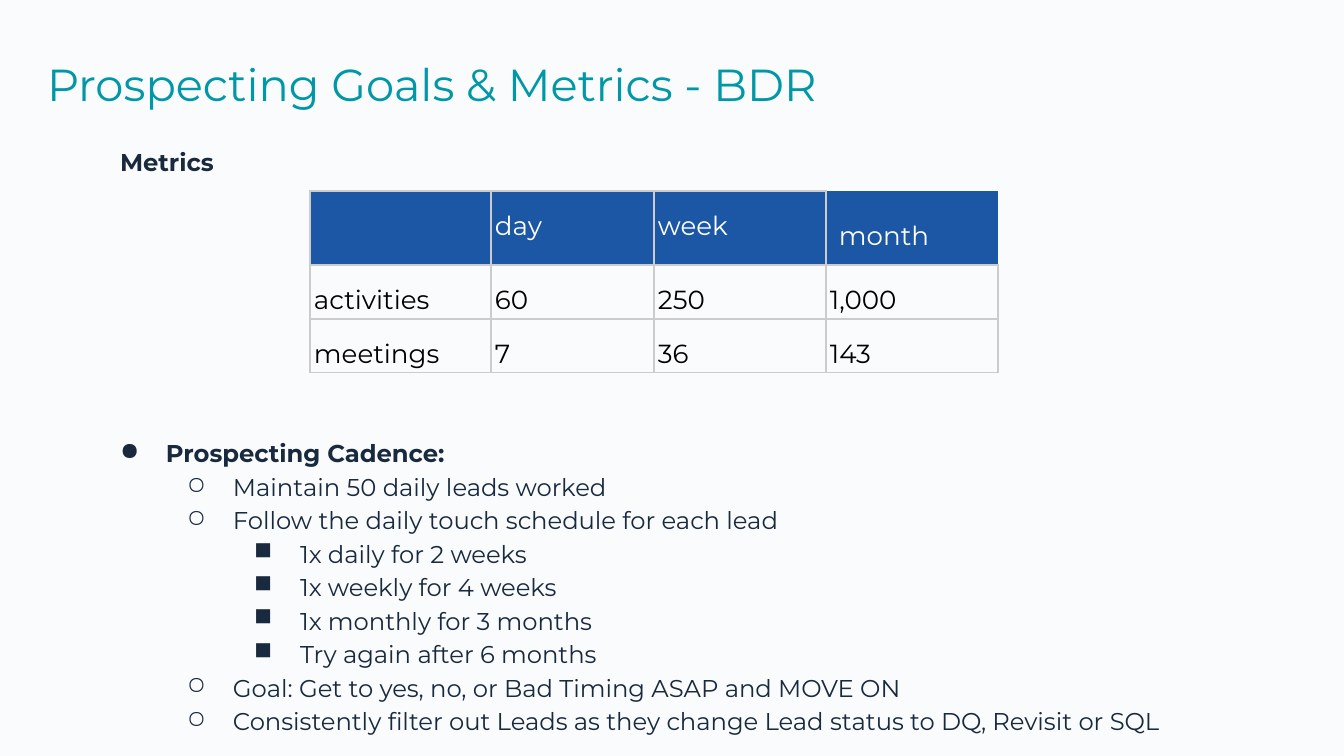
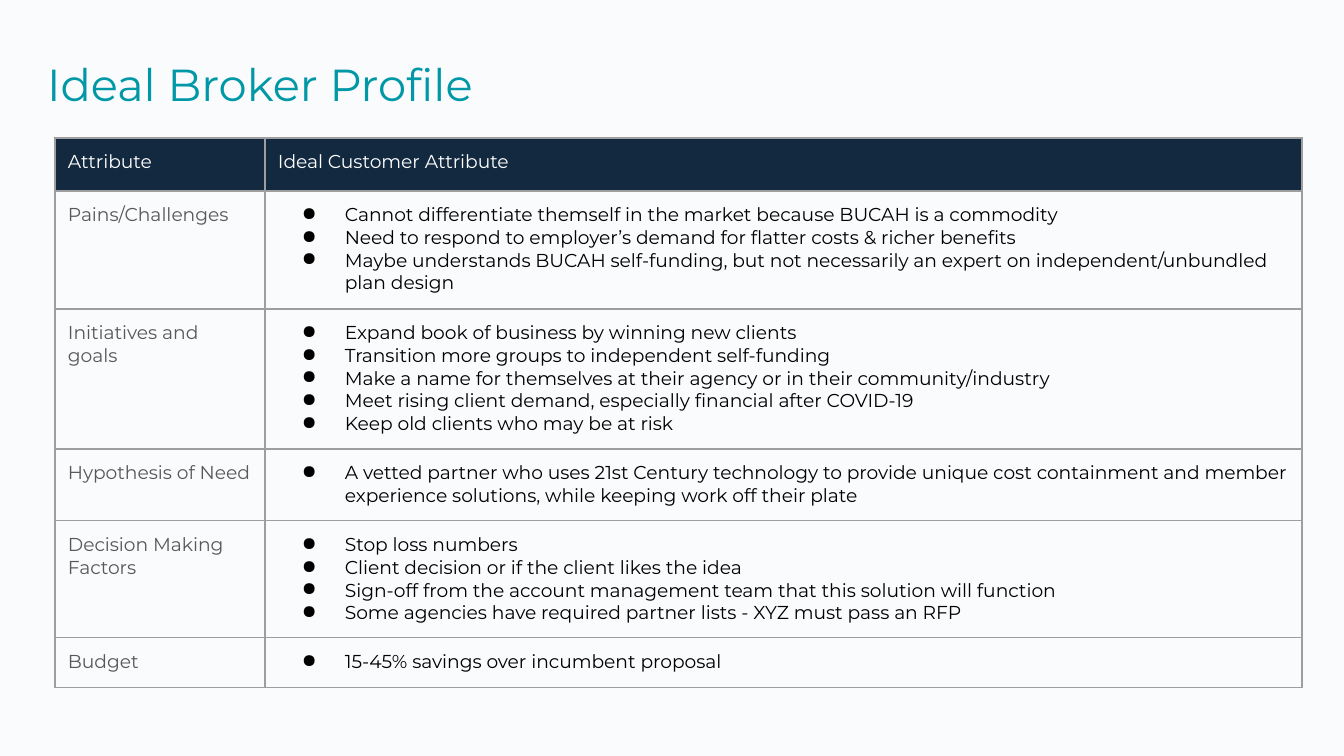
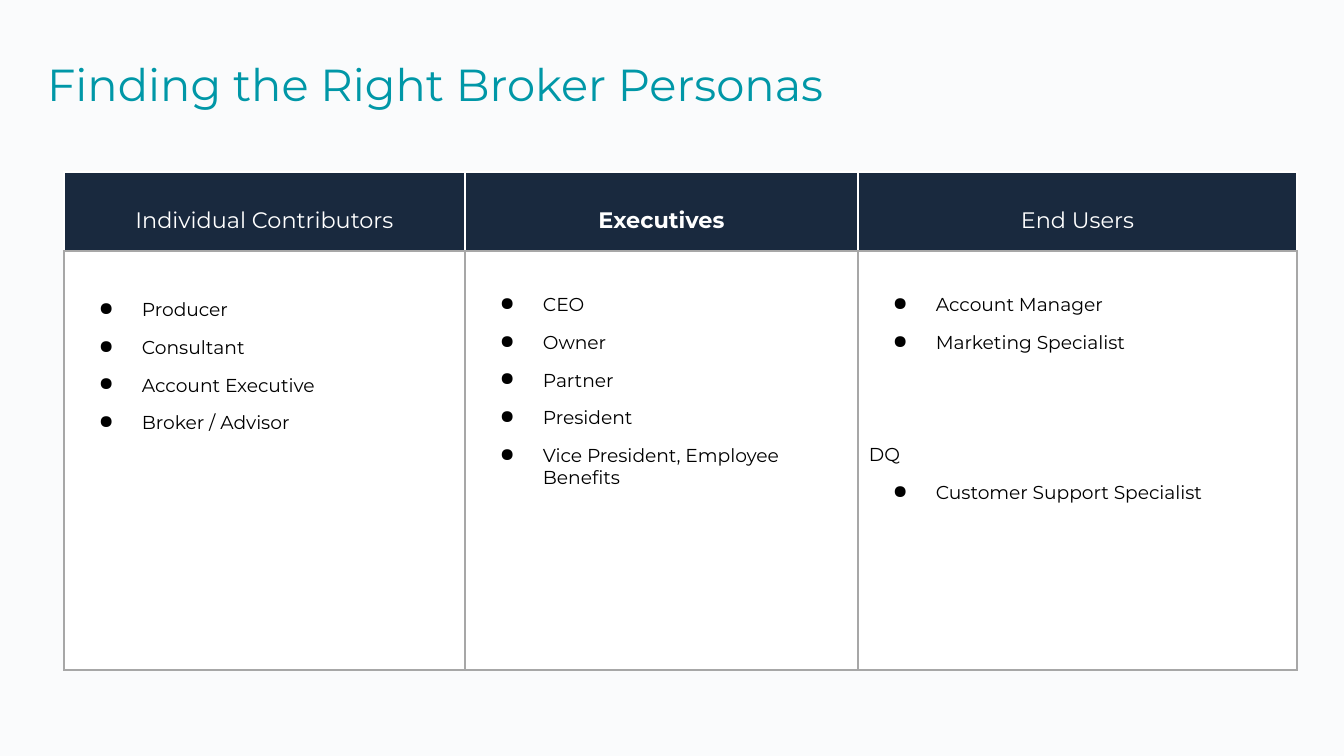
from lxml.etree import SubElement
from pptx import Presentation
from pptx.dml.color import RGBColor
from pptx.enum.text import MSO_ANCHOR, MSO_AUTO_SIZE, PP_ALIGN
from pptx.oxml import parse_xml
from pptx.oxml.ns import nsdecls, qn
from pptx.util import Pt

# Content
METRICS_TITLE = "Prospecting Goals & Metrics - BDR"
METRICS = [
    ["", "day", "week", "month"],
    ["activities", "60", "250", "1,000"],
    ["meetings", "7", "36", "143"],
]
CADENCE = [  # level, text
    (0, "Prospecting Cadence:"),
    (1, "Maintain 50 daily leads worked"),
    (1, "Follow the daily touch schedule for each lead"),
    (2, "1x daily for 2 weeks"),
    (2, "1x weekly for 4 weeks"),
    (2, "1x monthly for 3 months"),
    (2, "Try again after 6 months"),
    (1, "Goal: Get to yes, no, or Bad Timing ASAP and MOVE ON"),
    (1, "Consistently filter out Leads as they change Lead status to DQ, Revisit or SQL"),
]

PROFILE_TITLE = "Ideal Broker Profile"
PROFILE_HEAD = ["Attribute", "Ideal Customer Attribute"]
PROFILE = [
    ("Pains/Challenges", [
        "Cannot differentiate themself in the market because BUCAH is a commodity",
        "Need to respond to employer’s demand for flatter costs & richer benefits",
        "Maybe understands BUCAH self-funding, but not necessarily an expert on "
        "independent/unbundled plan design"]),
    ("Initiatives and goals", [
        "Expand book of business by winning new clients",
        "Transition more groups to independent self-funding",
        "Make a name for themselves at their agency or in their community/industry",
        "Meet rising client demand, especially financial after COVID-19",
        "Keep old clients who may be at risk"]),
    ("Hypothesis of Need", [
        "A vetted partner who uses 21st Century technology to provide unique cost "
        "containment and member experience solutions, while keeping work off their plate"]),
    ("Decision Making Factors", [
        "Stop loss numbers",
        "Client decision or if the client likes the idea",
        "Sign-off from the account management team that this solution will function",
        "Some agencies have required partner lists - XYZ must pass an RFP"]),
    ("Budget", ["15-45% savings over incumbent proposal"]),
]

PERSONAS_TITLE = "Finding the Right Broker Personas"
PERSONAS = [  # heading, bold heading, top inset, roles, disqualified roles
    ("Individual Contributors", False, 48,
     ["Producer", "Consultant", "Account Executive", "Broker / Advisor"], []),
    ("Executives", True, 43,
     ["CEO", "Owner", "Partner", "President", "Vice President, Employee Benefits"], []),
    ("End Users", False, 43,
     ["Account Manager", "Marketing Specialist"], ["Customer Support Specialist"]),
]

# Theme
THEME = {
    "font": "Montserrat",
    "bg": "FAFBFC", "title": "0097A7", "ink": "19293E", "blue": "1B57A5",
    "navy": "132940", "white": "FFFFFF", "black": "000000", "label": "585858",
    "metric_line": "CCCCCC", "profile_line": "9E9E9E", "persona_line": "A7A7A7",
    "title_size": 24, "metric_size": 14, "body_size": 13, "head_size": 12, "cell_size": 10,
}
BULLETS = "●○■"
INDENT = 67
PAD = (13, 13, 13, 13)
TIGHT = (4, 3, 4, 3)


def px(n):
    return round(n * 914400 / 134.4)


def rgb(name):
    return RGBColor.from_string(THEME[name])


# Text
def add_text(tf, text, size="cell_size", color="black", bold=False, align=PP_ALIGN.LEFT,
             spacing=None, before=None, level=None, hang=43):
    """Append one paragraph; a level makes it a bullet."""
    p = tf.paragraphs[0]
    if p.runs:
        p = tf.add_paragraph()
    p.alignment = align
    if spacing:
        p.line_spacing = spacing
    if before is not None:
        p.space_before = Pt(before)
    if level is not None:
        p.level = level
        pPr = p._p.get_or_add_pPr()
        pPr.set("marL", str(px(INDENT * (level + 1))))
        pPr.set("indent", str(-px(hang)))
        clr = SubElement(pPr, qn("a:buClr"))
        SubElement(clr, qn("a:srgbClr"), val=THEME[color])
        SubElement(pPr, qn("a:buChar"), char=BULLETS[level])
    r = p.add_run()
    r.text = text
    r.font.name, r.font.size, r.font.bold = THEME["font"], Pt(THEME[size]), bold
    r.font.color.rgb = rgb(color)


def set_insets(target, insets):
    (target.margin_left, target.margin_top,
     target.margin_right, target.margin_bottom) = map(px, insets)


def set_frame(sp, box, insets=PAD, anchor=MSO_ANCHOR.TOP):
    sp.left, sp.top, sp.width, sp.height = map(px, box)
    tf = sp.text_frame
    tf.word_wrap, tf.auto_size, tf.vertical_anchor = True, MSO_AUTO_SIZE.NONE, anchor
    set_insets(tf, insets)
    return tf


def add_box(s, box, **frame):
    return set_frame(s.shapes.add_textbox(0, 0, 0, 0), box, **frame)


def add_slide(prs, title):
    s = prs.slides.add_slide(prs.slide_layouts[5])
    tf = set_frame(s.shapes.title, (34, 44, 1137, 77))
    add_text(tf, title, size="title_size", color="title")
    return s


# Tables
def add_grid(s, left, top, cols, rows):
    tbl = s.shapes.add_table(len(rows), len(cols), px(left), px(top),
                             px(sum(cols)), px(sum(rows))).table
    tbl.first_row = tbl.horz_banding = False
    for col, width in zip(tbl.columns, cols):
        col.width = px(width)
    for row, height in zip(tbl.rows, rows):
        row.height = px(height)
    return tbl


def style_cell(cell, fill=None, insets=PAD, anchor=MSO_ANCHOR.TOP, width=0.75, **lines):
    """Sides L, R, T, B take a colour name; a side left out has no line."""
    set_insets(cell, insets)
    cell.vertical_anchor = anchor
    if fill:
        cell.fill.solid()
        cell.fill.fore_color.rgb = rgb(fill)
    else:
        cell.fill.background()
    tcPr = cell._tc.get_or_add_tcPr()
    for i, side in enumerate("LRTB"):
        paint = "<a:noFill/>"
        if side in lines:
            paint = f'<a:solidFill><a:srgbClr val="{THEME[lines[side]]}"/></a:solidFill>'
        tcPr.insert(i, parse_xml(
            f'<a:ln{side} {nsdecls("a")} w="{Pt(width)}">{paint}</a:ln{side}>'))
    return cell.text_frame


def all_sides(color, sides="LRTB"):
    return dict.fromkeys(sides, color)


# Slides
def metrics_slide(prs):
    s = add_slide(prs, METRICS_TITLE)
    tf = add_box(s, (98, 129, 1125, 69), insets=(22, 0, 0, 0), anchor=MSO_ANCHOR.MIDDLE)
    add_text(tf, "Metrics", size="body_size", color="ink", bold=True, spacing=0.9)

    tf = add_box(s, (86, 421, 1171, 441))
    for level, text in CADENCE:
        add_text(tf, text, size="body_size", color="ink", bold=level == 0,
                 spacing=1.15, level=level, hang=46)

    tbl = add_grid(s, 310, 191, [181, 163, 172, 172], [74, 54, 53])
    for i, row in enumerate(METRICS):
        for j, text in enumerate(row):
            is_month = text == "month"
            tf = style_cell(tbl.cell(i, j), None if i else "blue",
                            PAD if is_month else TIGHT, width=0.94,
                            **all_sides("metric_line", "LB" if is_month else "LRTB"))
            if text:
                add_text(tf, text, size="metric_size",
                         color="black" if i else "white", spacing=1.5)


def profile_slide(prs):
    s = add_slide(prs, PROFILE_TITLE)
    tbl = add_grid(s, 55, 138, [210, 1037], [53, 118, 140, 72, 117, 50])
    lines = all_sides("profile_line")
    for j, text in enumerate(PROFILE_HEAD):
        add_text(style_cell(tbl.cell(0, j), "navy", **lines), text, color="white")
    for i, (label, points) in enumerate(PROFILE, 1):
        add_text(style_cell(tbl.cell(i, 0), **lines), label, color="label")
        tf = style_cell(tbl.cell(i, 1), **lines)
        for point in points:
            add_text(tf, point, level=0)


def personas_slide(prs):
    s = add_slide(prs, PERSONAS_TITLE)
    tbl = add_grid(s, 64, 172, [401, 393, 439], [79, 419])
    for j, (heading, bold, top, roles, disqualified) in enumerate(PERSONAS):
        tf = style_cell(tbl.cell(0, j), "ink", (11, 19, 11, 5), MSO_ANCHOR.MIDDLE, 1,
                        B="persona_line", **all_sides("white", "LRT"))
        add_text(tf, heading, size="head_size", color="white", bold=bold,
                 align=PP_ALIGN.CENTER, spacing=1.15)
        tf = style_cell(tbl.cell(1, j), "white", (11, top, 11, 5),
                        **all_sides("persona_line"))
        for n, role in enumerate(roles):
            add_text(tf, role, before=8 if n else 0, level=0)
        if disqualified:
            add_text(tf, "DQ", before=48)
        for role in disqualified:
            add_text(tf, role, before=8, level=0)


def main():
    prs = Presentation()
    prs.slide_width, prs.slide_height = px(1344), px(756)
    fill = prs.slide_master.background.fill
    fill.solid()
    fill.fore_color.rgb = rgb("bg")
    metrics_slide(prs)
    profile_slide(prs)
    personas_slide(prs)
    prs.save("out.pptx")


if __name__ == "__main__":
    main()
